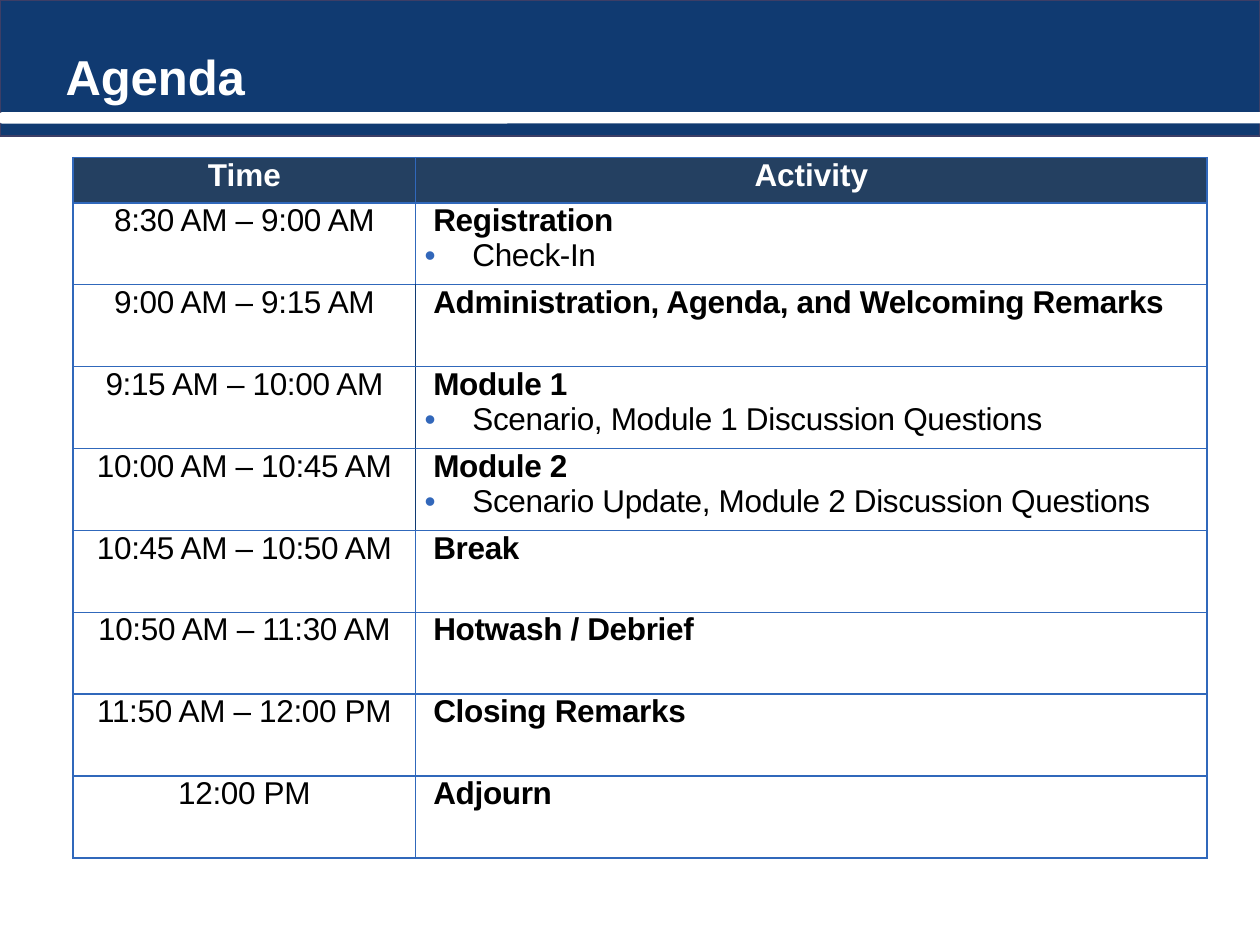
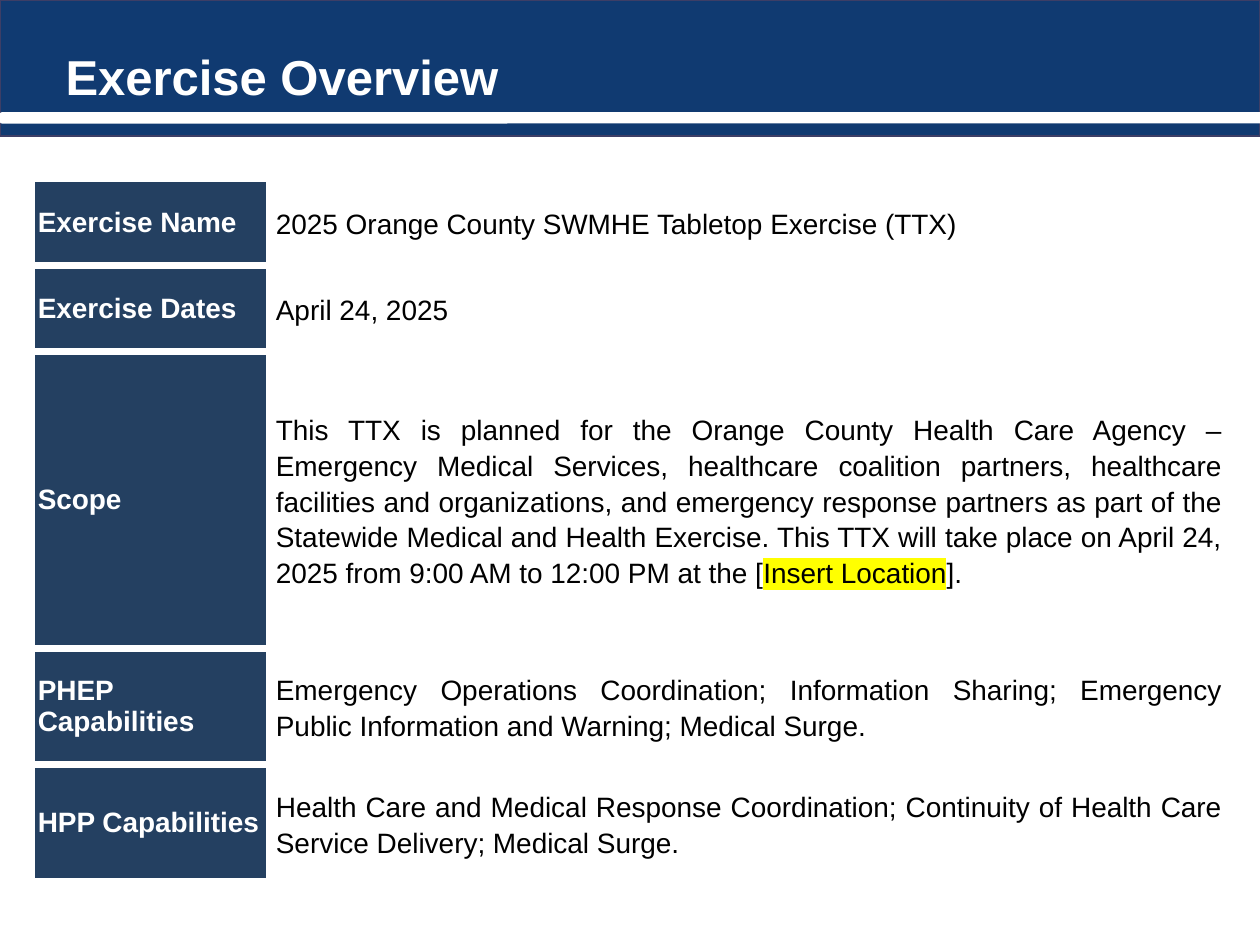
"""Build the agenda and exercise overview slides of a tabletop exercise briefing."""
import dataclasses

import lxml.etree
import pptx
import pptx.dml.color
import pptx.enum.shapes
import pptx.enum.text
import pptx.oxml.ns
import pptx.util

ALIGN = pptx.enum.text.PP_ALIGN
ANCHOR = pptx.enum.text.MSO_ANCHOR
SHAPE = pptx.enum.shapes.MSO_SHAPE
Inches = pptx.util.Inches
Pt = pptx.util.Pt
qn = pptx.oxml.ns.qn


@dataclasses.dataclass(frozen=True)
class Theme:
    font: str = "Arial"
    band: str = "103A71"
    band_line: str = "3D3E66"
    header: str = "244061"
    grid: str = "3068BB"
    bullet: str = "3267BA"
    highlight: str = "FFFF00"
    white: str = "FFFFFF"
    black: str = "000000"
    title_size: int = 28
    agenda_size: int = 18
    overview_size: int = 16


THEME = Theme()
SLIDE_SIZE = (10, 7.5)
BAND_BOX = (0, 0, 10, 1.08)
STRIPE_BOX = (0, 0.89, 10.08, 0.09)
TITLE_BOX = (0.42, 0, 9.33, 0.89)

AGENDA_TITLE = "Agenda"
AGENDA_HEADINGS = ("Time", "Activity")
AGENDA = [
    ("8:30 AM – 9:00 AM", "Registration", "Check-In"),
    ("9:00 AM – 9:15 AM", "Administration, Agenda, and Welcoming Remarks", None),
    ("9:15 AM – 10:00 AM", "Module 1", "Scenario, Module 1 Discussion Questions"),
    ("10:00 AM – 10:45 AM", "Module 2", "Scenario Update, Module 2 Discussion Questions"),
    ("10:45 AM – 10:50 AM", "Break", None),
    ("10:50 AM – 11:30 AM", "Hotwash / Debrief", None),
    ("11:50 AM – 12:00 PM", "Closing Remarks", None),
    ("12:00 PM", "Adjourn", None),
]
AGENDA_ORIGIN = (0.58, 1.25)
AGENDA_COLUMNS = (2.72, 6.28)
AGENDA_ROWS = [0.36] + [0.65] * len(AGENDA)
DARK_DIVIDER_ROWS = (2, 3, 4)

OVERVIEW_TITLE = "Exercise Overview"
OVERVIEW = [
    ("Exercise Name", ["2025 Orange County SWMHE Tabletop Exercise (TTX)"], 0.69),
    ("Exercise Dates", ["April 24, 2025"], 0.68),
    ("Scope", [
        "This TTX is planned for the Orange County Health Care Agency – Emergency Medical "
        "Services, healthcare coalition partners, healthcare facilities and organizations, "
        "and emergency response partners as part of the Statewide Medical and Health "
        "Exercise. This TTX will take place on April 24, 2025 from 9:00 AM to 12:00 PM at the [",
        "Insert Location",
        "].",
    ], 2.36),
    ("PHEP Capabilities", [
        "Emergency Operations Coordination; Information Sharing; Emergency Public "
        "Information and Warning; Medical Surge.",
    ], 0.92),
    ("HPP Capabilities", [
        "Health Care and Medical Response Coordination; Continuity of Health Care "
        "Service Delivery; Medical Surge.",
    ], 0.93),
]
OVERVIEW_ORIGIN = (0.25, 1.42)
OVERVIEW_COLUMNS = (1.89, 7.61)


def rgb(color):
    """Turn a hex string into a colour."""
    return pptx.dml.color.RGBColor.from_string(color)


def add_child(parent, tag, **attributes):
    """Append a drawing element with the given attributes."""
    return lxml.etree.SubElement(parent, qn(tag), attributes)


def write(paragraph, text, size, color=THEME.black, bold=False, align=ALIGN.LEFT,
          before=0, after=0, leading=None, tracking=None, highlight=None):
    """Add a run of text to a paragraph and format both."""
    paragraph.alignment = align
    paragraph.space_before = Pt(before)
    paragraph.space_after = Pt(after)
    paragraph.line_spacing = leading
    run = paragraph.add_run()
    run.text = text
    run.font.name = THEME.font
    run.font.size = Pt(size)
    run.font.bold = bold
    run.font.color.rgb = rgb(color)
    properties = run._r.get_or_add_rPr()
    if tracking:
        properties.set("spc", str(round(tracking * 100)))
    if highlight:
        mark = lxml.etree.Element(qn("a:highlight"))
        add_child(mark, "a:srgbClr", val=highlight)
        properties.find(qn("a:solidFill")).addnext(mark)


def indent(paragraph, left, first=0, bullet=None):
    """Set a paragraph's indents and optional bullet."""
    properties = paragraph._p.get_or_add_pPr()
    properties.set("marL", str(Inches(left)))
    properties.set("indent", str(Inches(first)))
    if bullet:
        add_child(add_child(properties, "a:buClr"), "a:srgbClr", val=THEME.bullet)
        add_child(properties, "a:buFont", typeface=THEME.font)
        add_child(properties, "a:buChar", char=bullet)


def set_borders(cell, color, width, **side_colors):
    """Draw the four borders of a cell, with other colours for named sides."""
    properties = cell._tc.get_or_add_tcPr()
    for side in "LRTB":
        line = add_child(properties, f"a:ln{side}", w=str(Pt(width)))
        fill = add_child(line, "a:solidFill")
        add_child(fill, "a:srgbClr", val=side_colors.get(side, color))


def add_grid(slide, origin, columns, rows, inset, anchor):
    """Add a plain table with the given column widths and row heights."""
    box = (*origin, sum(columns), sum(rows))
    table = slide.shapes.add_table(len(rows), len(columns), *map(Inches, box)).table
    table.first_row = table.horz_banding = False
    for column, width in zip(table.columns, columns):
        column.width = Inches(width)
    for row, height in zip(table.rows, rows):
        row.height = Inches(height)
    for cell in table.iter_cells():
        cell.margin_left = cell.margin_right = Inches(inset)
        cell.margin_top = cell.margin_bottom = 0
        cell.vertical_anchor = anchor
    return table


def paint(cell, color=None):
    """Fill a cell, or leave it clear."""
    if color:
        cell.fill.solid()
        cell.fill.fore_color.rgb = rgb(color)
    else:
        cell.fill.background()


def add_slide(presentation, layout, title):
    """Add a slide with its title."""
    slide = presentation.slides.add_slide(layout)
    frame = slide.shapes.title.text_frame
    frame.vertical_anchor = ANCHOR.BOTTOM
    frame.auto_size = pptx.enum.text.MSO_AUTO_SIZE.NONE
    write(frame.paragraphs[0], title, THEME.title_size, THEME.white, bold=True)
    return slide


def prepare_layout(layout):
    """Keep only the title placeholder and place it in the band."""
    for placeholder in list(layout.placeholders):
        if placeholder.placeholder_format.type == pptx.enum.shapes.PP_PLACEHOLDER.TITLE:
            placeholder.left, placeholder.top, placeholder.width, placeholder.height = map(
                Inches, TITLE_BOX)
        else:
            layout.shapes.element.remove(placeholder.element)


def add_bands(slide, layout):
    """Draw the title band and its stripe, and move them behind the layout's title."""
    band = slide.shapes.add_shape(SHAPE.RECTANGLE, *map(Inches, BAND_BOX))
    stripe = slide.shapes.add_shape(SHAPE.ROUNDED_RECTANGLE, *map(Inches, STRIPE_BOX))
    band.line.color.rgb = rgb(THEME.band_line)
    band.line.width = Pt(1.5)
    stripe.line.fill.background()
    for position, (shape, color) in enumerate(((band, THEME.band), (stripe, THEME.white)), 2):
        shape.shadow.inherit = False
        shape.fill.solid()
        shape.fill.fore_color.rgb = rgb(color)
        layout.shapes.element.insert(position, shape.element)


def fill_agenda(slide):
    """Add the table of times and activities."""
    size = THEME.agenda_size
    table = add_grid(slide, AGENDA_ORIGIN, AGENDA_COLUMNS, AGENDA_ROWS, 0.07, ANCHOR.TOP)
    for row in range(len(AGENDA_ROWS)):
        divider = THEME.band if row in DARK_DIVIDER_ROWS else THEME.grid
        for column, side in enumerate("RL"):
            cell = table.cell(row, column)
            set_borders(cell, THEME.grid, 1, **{side: divider})
            paint(cell, None if row else THEME.header)
    for column, heading in enumerate(AGENDA_HEADINGS):
        write(table.cell(0, column).text_frame.paragraphs[0], heading, size, THEME.white,
              bold=True, align=ALIGN.CENTER, before=10)
    for row, (time, activity, detail) in enumerate(AGENDA, 1):
        write(table.cell(row, 0).text_frame.paragraphs[0], time, size,
              align=ALIGN.CENTER, before=10, tracking=-0.2)
        frame = table.cell(row, 1).text_frame
        write(frame.paragraphs[0], activity, size, bold=True, before=10, tracking=-0.2)
        indent(frame.paragraphs[0], 0.07)
        if detail:
            paragraph = frame.add_paragraph()
            write(paragraph, detail, size, tracking=-0.2)
            indent(paragraph, 0.38, -0.38, "•")


def fill_overview(slide):
    """Add the table of exercise facts."""
    size = THEME.overview_size
    heights = [height for _, _, height in OVERVIEW]
    table = add_grid(slide, OVERVIEW_ORIGIN, OVERVIEW_COLUMNS, heights, 0.05, ANCHOR.MIDDLE)
    for row, (label, parts, _) in enumerate(OVERVIEW):
        for column, color in enumerate((THEME.header, None)):
            set_borders(table.cell(row, column), THEME.white, 4.5)
            paint(table.cell(row, column), color)
        write(table.cell(row, 0).text_frame.paragraphs[0], label, size, THEME.white,
              bold=True, before=6, after=6)
        for index, part in enumerate(parts):
            write(table.cell(row, 1).text_frame.paragraphs[0], part, size,
                  align=ALIGN.JUSTIFY, leading=1.15, after=8 if len(parts) > 1 else 0,
                  highlight=THEME.highlight if index == 1 else None)


def main():
    """Build and save the presentation."""
    presentation = pptx.Presentation()
    presentation.slide_width, presentation.slide_height = map(Inches, SLIDE_SIZE)
    layout = presentation.slide_layouts.get_by_name("Title Only")
    prepare_layout(layout)
    agenda = add_slide(presentation, layout, AGENDA_TITLE)
    add_bands(agenda, layout)
    fill_agenda(agenda)
    fill_overview(add_slide(presentation, layout, OVERVIEW_TITLE))
    presentation.save("out.pptx")


if __name__ == "__main__":
    main()
